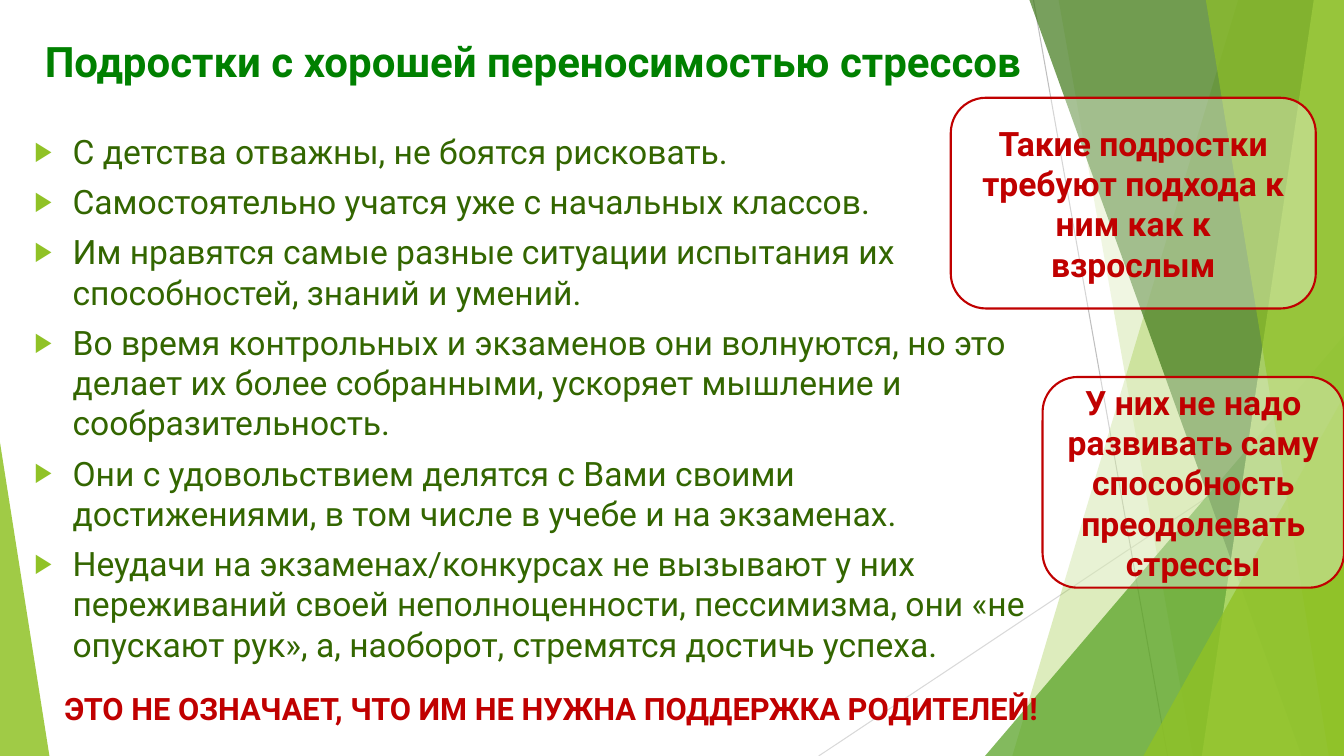
from pptx import Presentation
from pptx.dml.color import RGBColor
from pptx.enum.shapes import MSO_CONNECTOR, MSO_SHAPE
from pptx.enum.text import MSO_ANCHOR as ANCHOR, MSO_AUTO_SIZE, PP_ALIGN as ALIGN
from pptx.oxml.ns import qn
from pptx.util import Inches, Pt
from lxml.etree import SubElement

FONT = "Roboto"
COLORS = {
    "white": "FFFFFF", "title": "008000", "body": "336600", "red": "C00000",
    "lime": "90C226", "green": "54A021", "forest": "3F7819", "pale": "C0E474",
    "grey": "BFBFBF", "silver": "D9D9D9",
}
W, H = 13.33, 7.5

TITLE = "Подростки с хорошей переносимостью стрессов"
TRAITS = [
    "С детства отважны, не боятся рисковать.",
    "Самостоятельно учатся уже с начальных классов.",
    "Им нравятся самые разные ситуации испытания их способностей, знаний и умений.",
    "Во время контрольных и экзаменов они волнуются, но это делает их более "
    "собранными, ускоряет мышление и сообразительность.",
    "Они с удовольствием делятся с Вами своими достижениями, в том числе в учебе "
    "и на экзаменах.",
    "Неудачи на экзаменах/конкурсах не вызывают у них переживаний своей "
    "неполноценности, пессимизма, они «не опускают рук», а, наоборот, стремятся "
    "достичь успеха.",
]
CALLOUTS = [
    ("Такие подростки требуют подхода к ним как к взрослым", (9.43, 0.97, 3.62, 2.09)),
    ("У них не надо развивать саму способность преодолевать стрессы",
     (10.34, 3.74, 2.99, 2.09)),
]
WARNING = "ЭТО НЕ ОЗНАЧАЕТ, ЧТО ИМ НЕ НУЖНА ПОДДЕРЖКА РОДИТЕЛЕЙ!"

RAYS = [((10.25, 0), (11.58, H), "grey"), ((W, 4.03), (8.12, H), "silver")]
# Back to front: a band is (top x, bottom x) up to the right edge,
# a triangle is (left, top, width, height) with its apex position.
FACETS = [
    ("band", (12.28, 10.04), None, "lime", 30),
    ("band", (10.5, 11.83), None, "lime", 20),
    ("triangle", (9.77, 3.33, 3.56, 4.17), 1, "green", 72),
    ("band", (10.21, 12.91), None, "forest", 70),
    ("band", (13.03, 11.92), None, "pale", 70),
    ("band", (11.96, 13.18), None, "lime", 65),
    ("triangle", (11.34, 3.93, 1.99, 3.57), 1, "lime", 80),
    ("triangle", (0, 4.39, 0.49, 3.11), 0, "lime", 85),
]


def rgb(name):
    return RGBColor.from_string(COLORS[name])


def inches(values):
    return [Inches(v) for v in values]


def fill_shape(sp, color, opacity):
    """Give a flat fill with the opacity in percent."""
    sp.shadow.inherit = False
    sp.fill.solid()
    sp.fill.fore_color.rgb = rgb(color)
    clr = sp._element.spPr.find(qn("a:solidFill"))[0]
    SubElement(clr, qn("a:alpha")).set("val", str(opacity * 1000))


def set_text(sp, lines, size, color, bold, align, anchor):
    tf = sp.text_frame
    tf.text = "\n".join(lines)
    tf.word_wrap = True
    tf.auto_size = MSO_AUTO_SIZE.NONE
    tf.vertical_anchor = anchor
    for p in tf.paragraphs:
        p.alignment = align
        for r in p.runs:
            r.font.name, r.font.size, r.font.bold = FONT, Pt(size), bold
            r.font.color.rgb = rgb(color)


def place(sp, box):
    sp.left, sp.top, sp.width, sp.height = inches(box)


def set_bullet(p):
    p.space_before = Pt(7)
    pPr = p._p.get_or_add_pPr()
    pPr.set("marL", str(Inches(0.38)))
    pPr.set("indent", str(-Inches(0.38)))
    clr = SubElement(pPr, qn("a:buClr"))
    SubElement(clr, qn("a:srgbClr")).set("val", COLORS["lime"])
    SubElement(pPr, qn("a:buSzPct")).set("val", "80000")
    SubElement(pPr, qn("a:buChar")).set("char", "▶")


def draw_backdrop(shapes):
    for start, end, color in RAYS:
        ray = shapes.add_connector(MSO_CONNECTOR.STRAIGHT, *inches(start + end))
        ray.line.color.rgb = rgb(color)
        ray.line.width = Pt(0.75)
        SubElement(ray._element.spPr, qn("a:effectLst"))
    for kind, geometry, apex, color, opacity in FACETS:
        if kind == "band":
            top, bottom = geometry
            outline = shapes.build_freeform(*inches((top, 0)))
            corners = [(W, 0), (W, H), (bottom, H)]
            outline.add_line_segments([inches(c) for c in corners], close=True)
            sp = outline.convert_to_shape()
        else:
            sp = shapes.add_shape(MSO_SHAPE.ISOSCELES_TRIANGLE, *inches(geometry))
            sp.adjustments[0] = apex
        fill_shape(sp, color, opacity)
        sp.line.fill.background()


def main():
    prs = Presentation()
    prs.slide_width, prs.slide_height = inches((W, H))
    s = prs.slides.add_slide(prs.slide_layouts[1])
    title, body = s.placeholders

    draw_backdrop(s.shapes)
    for sp in (title, body):  # bring the text in front of the backdrop
        s.shapes._spTree.append(sp._element)

    place(title, (0.24, 0.3, 10.1, 0.81))
    set_text(title, [TITLE], 30, "title", True, ALIGN.CENTER, ANCHOR.TOP)
    place(body, (0.24, 1.25, 10.1, 5.59))
    set_text(body, TRAITS, 24, "body", False, ALIGN.LEFT, ANCHOR.TOP)
    for p in body.text_frame.paragraphs:
        set_bullet(p)

    for text, box in CALLOUTS:
        sp = s.shapes.add_shape(MSO_SHAPE.ROUNDED_RECTANGLE, *inches(box))
        fill_shape(sp, "white", 35)
        sp.line.color.rgb = rgb("red")
        sp.line.width = Pt(1.5)
        set_text(sp, [text], 24, "red", True, ALIGN.CENTER, ANCHOR.MIDDLE)

    sp = s.shapes.add_textbox(*inches((0.54, 6.71, 10.43, 0.64)))
    set_text(sp, [WARNING], 22, "red", True, ALIGN.LEFT, ANCHOR.MIDDLE)
    prs.save("out.pptx")


if __name__ == "__main__":
    main()
